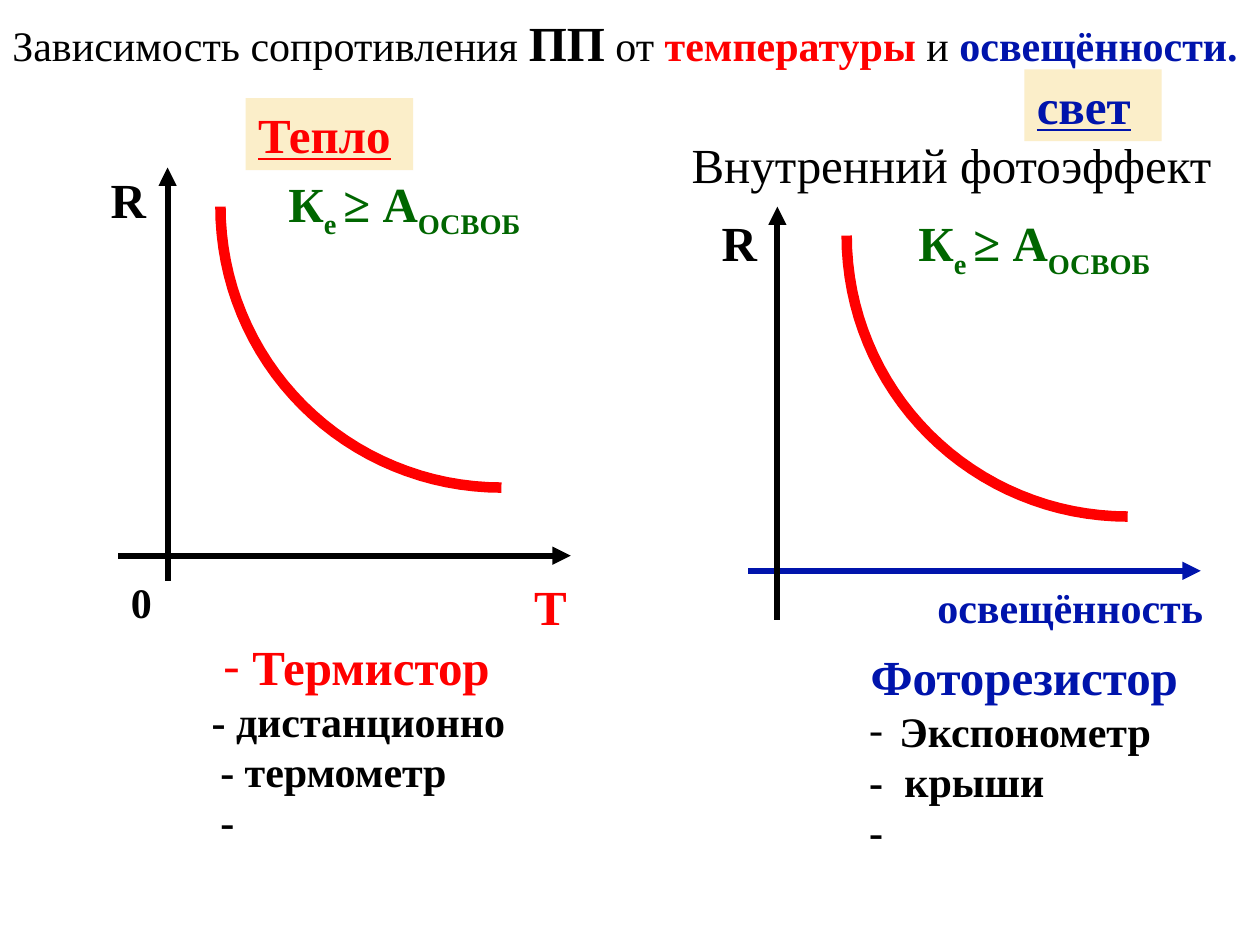
from math import cos, pi, sin

from lxml.etree import SubElement
from pptx import Presentation
from pptx.dml.color import RGBColor
from pptx.enum.shapes import MSO_CONNECTOR as Connector, MSO_SHAPE as Shape
from pptx.enum.text import MSO_ANCHOR as Anchor, MSO_AUTO_SIZE as AutoSize, PP_ALIGN as Align
from pptx.oxml.ns import qn
from pptx.util import Inches, Pt

FONT = "Times New Roman"
BLACK, RED, BLUE, GREEN, CREAM = "000000", "FF0000", "0014AC", "006600", "FBEEC9"
CURVE_SIZE = 2.23
CURVE_STEPS = 32


def run(text, size=28, color=BLACK, bold=True, underline=False, subscript=False):
    """Describe one run of text."""
    return dict(text=text, size=size, color=color, bold=bold,
                underline=underline, subscript=subscript)


def line(*runs, align=Align.LEFT, left=0, hanging=0, bullet=None):
    """Describe one paragraph with its indents in inches."""
    return dict(runs=runs, align=align, left=left, hanging=hanging, bullet=bullet)


FORMULA = [line(run("К", color=GREEN), run("е ", color=GREEN, subscript=True),
                run("≥ А", color=GREEN), run("ОСВОБ", color=GREEN, subscript=True))]
TITLE = [line(run("Зависимость сопротивления ", 24, bold=False), run("ПП"),
              run(" от ", 24, bold=False), run("температуры", 24, RED),
              run(" и ", 24, bold=False), run("освещённости.", 24, BLUE))]
THERMISTOR = [
    line(run("Термистор", color=RED), align=Align.CENTER, left=0.2, hanging=0.23, bullet="-"),
    line(run("- дистанционно", 24), align=Align.CENTER),
    line(run("- термометр", 24), left=0.17),
    line(run("-", 24), left=0.17),
]
PHOTORESISTOR = [
    line(run("Фоторезистор", color=BLUE), align=Align.CENTER),
    line(run("Экспонометр", 24), left=0.24, hanging=0.24, bullet="-"),
    line(run("-\tкрыши", 24), left=0.28, hanging=0.28),
    line(run("-", 24)),
]

TEXTS = [
    ((0, 0.05, 10, 0.57), TITLE, None),
    ((1.95, 0.78, 1.33, 0.57), [line(run("Тепло", color=RED, underline=True))], CREAM),
    ((8.13, 0.55, 1.09, 0.57), [line(run("свет", color=BLUE, underline=True))], CREAM),
    ((5.39, 1.02, 4.61, 0.57), [line(run("Внутренний фотоэффект", bold=False))], None),
    ((0.78, 1.3, 0.7, 0.57), [line(run("R"))], None),
    ((5.63, 1.64, 0.7, 0.57), [line(run("R"))], None),
    ((2.19, 1.33, 2.34, 0.57), FORMULA, None),
    ((7.19, 1.64, 2.34, 0.57), FORMULA, None),
    ((0.94, 4.53, 0.55, 0.5), [line(run("0", 24))], None),
    ((4.14, 4.53, 0.7, 0.57), [line(run("Т", color=RED))], None),
    ((7.34, 4.57, 2.42, 0.5), [line(run("освещённость", 24, BLUE))], None),
    ((1.48, 5, 2.73, 2.19), THERMISTOR, None),
    ((6.8, 5.08, 2.66, 1.78), PHOTORESISTOR, None),
]
AXES = [
    ((0.94, 4.41), (4.53, 4.41), BLACK),
    ((1.33, 4.61), (1.33, 1.33), BLACK),
    ((5.94, 4.53), (9.53, 4.53), BLUE),
    ((6.17, 4.92), (6.17, 1.64), BLACK),
]
CURVES = [(1.75, 1.64), (6.72, 1.87)]


def rgb(color):
    """Turn a hex string into a colour."""
    return RGBColor.from_string(color)


def add_paragraph(paragraph, content):
    """Fill a paragraph with its runs, indents and bullet."""
    paragraph.alignment = content["align"]
    properties = paragraph._p.get_or_add_pPr()
    properties.set("marL", str(Inches(content["left"])))
    properties.set("indent", str(-Inches(content["hanging"])))
    if content["bullet"]:
        SubElement(properties, qn("a:buFont")).set("typeface", FONT)
        SubElement(properties, qn("a:buChar")).set("char", content["bullet"])
    for item in content["runs"]:
        text_run = paragraph.add_run()
        text_run.text = item["text"]
        font = text_run.font
        font.name, font.size = FONT, Pt(item["size"])
        font.bold, font.underline = item["bold"], item["underline"]
        font.color.rgb = rgb(item["color"])
        if item["subscript"]:
            text_run._r.get_or_add_rPr().set("baseline", "-25000")


def add_text(slide, place, lines, fill):
    """Add a text box, or a filled rectangle when a fill is given."""
    place = [Inches(value) for value in place]
    if fill:
        shape = slide.shapes.add_shape(Shape.RECTANGLE, *place)
        shape.shadow.inherit = False
        shape.fill.solid()
        shape.fill.fore_color.rgb = rgb(fill)
        shape.line.fill.background()
    else:
        shape = slide.shapes.add_textbox(*place)
    frame = shape.text_frame
    frame.word_wrap = True
    frame.auto_size = AutoSize.SHAPE_TO_FIT_TEXT
    frame.vertical_anchor = Anchor.TOP
    for index, content in enumerate(lines):
        add_paragraph(frame.add_paragraph() if index else frame.paragraphs[0], content)


def add_axis(slide, start, end, color):
    """Add a straight axis with an arrowhead at its end."""
    ends = [Inches(value) for value in start + end]
    axis = slide.shapes.add_connector(Connector.STRAIGHT, *ends)
    axis.line.color.rgb = rgb(color)
    axis.line.width = Pt(3.5)
    SubElement(axis.line._get_or_add_ln(), qn("a:tailEnd")).set("type", "triangle")
    SubElement(axis._element.spPr, qn("a:effectLst"))


def add_curve(slide, left, top):
    """Add a falling quarter circle that starts at the given corner."""
    angles = [pi / 2 * step / CURVE_STEPS for step in range(CURVE_STEPS + 1)]
    points = [(Inches(left + CURVE_SIZE * (1 - cos(angle))),
               Inches(top + CURVE_SIZE * sin(angle))) for angle in angles]
    builder = slide.shapes.build_freeform(*points[0])
    builder.add_line_segments(points[1:], close=False)
    curve = builder.convert_to_shape()
    curve.shadow.inherit = False
    curve.fill.background()
    curve.line.color.rgb = rgb(RED)
    curve.line.width = Pt(6)


def main():
    """Build the slide and save it."""
    presentation = Presentation()
    presentation.slide_width, presentation.slide_height = Inches(10), Inches(7.5)
    slide = presentation.slides.add_slide(presentation.slide_layouts[6])
    for axis in AXES:
        add_axis(slide, *axis)
    for corner in CURVES:
        add_curve(slide, *corner)
    for text in TEXTS:
        add_text(slide, *text)
    presentation.save("out.pptx")


if __name__ == "__main__":
    main()
